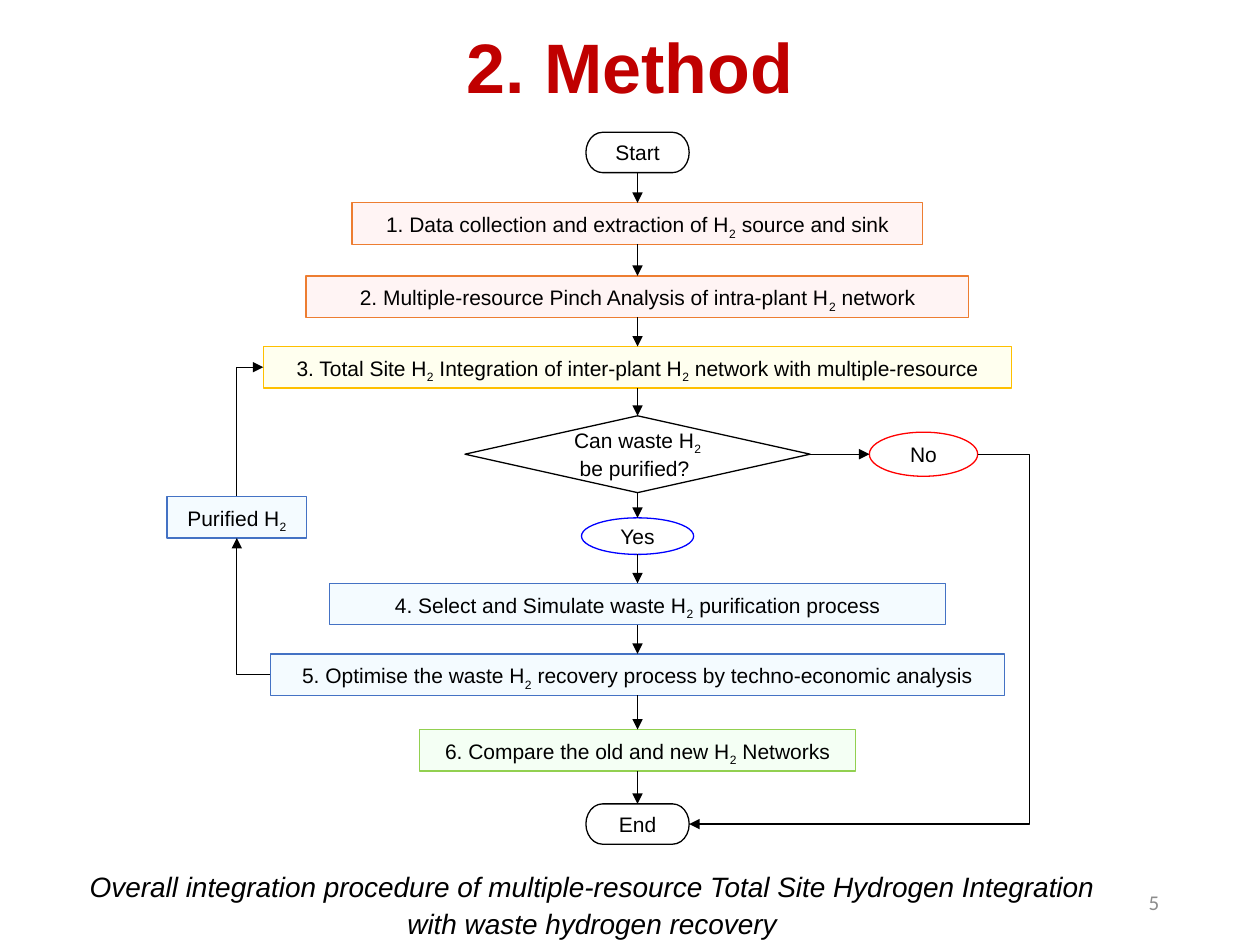
from lxml import etree
from pptx import Presentation
from pptx.dml.color import RGBColor
from pptx.enum.shapes import MSO_CONNECTOR, MSO_SHAPE
from pptx.enum.text import MSO_ANCHOR, MSO_AUTO_SIZE, PP_ALIGN
from pptx.oxml.ns import qn
from pptx.util import Inches, Pt

WIDTH, HEIGHT = 10, 7.5
FLOW_X = 5.06
RECYCLE_X = 1.88
STEP_HEIGHT = 0.33
TOP, LEFT, BOTTOM, RIGHT = range(4)
COLORS = {
    "title": "C00000", "ink": "000000", "number": "8C8C8C", "white": "FFFFFF",
    "orange": "ED7D31", "pink": "FFCCCC", "gold": "FFC000", "cream": "FFFFCC",
    "blue": "4472C4", "sky": "CCECFF", "green": "92D050", "mint": "CCFFCC",
    "yes": "0000FF", "no": "FF0000",
}
# text, top, width, line, fill, opacity in percent
STEPS = [
    ("1. Data collection and extraction of H_2_ source and sink", 1.61, 4.53, "orange", "pink", 20),
    ("2. Multiple-resource Pinch Analysis of intra-plant H_2_ network", 2.19, 5.26, "orange", "pink", 20),
    ("3. Total Site H_2_ Integration of inter-plant H_2_ network with multiple-resource",
     2.75, 5.94, "gold", "cream", 30),
    ("4. Select and Simulate waste H_2_ purification process", 4.63, 4.89, "blue", "sky", 20),
    ("5. Optimise the waste H_2_ recovery process by techno-economic analysis", 5.19, 5.83, "blue", "sky", 20),
    ("6. Compare the old and new H_2_ Networks", 5.79, 3.46, "green", "mint", 20),
]


def color(name):
    return RGBColor.from_string(COLORS[name])


def write(shape, text, size=12, ink="ink", font="Arial", align=PP_ALIGN.CENTER,
          anchor=MSO_ANCHOR.MIDDLE, spacing=None):
    """Fill a shape with one paragraph; parts between underscores are subscripts."""
    frame = shape.text_frame
    frame.word_wrap = True
    frame.vertical_anchor = anchor
    paragraph = frame.paragraphs[0]
    paragraph.alignment = align
    paragraph.line_spacing = spacing
    paragraph.font.size = Pt(size)
    paragraph.font.name = font
    paragraph.font.color.rgb = color(ink)
    for index, part in enumerate(text.split("_")):
        if part:
            run = paragraph.add_run()
            run.text = part
            if index % 2:
                run.font._element.set("baseline", "-25000")
    return paragraph


def add_label(slide, text, left, top, width, height, **style):
    box = slide.shapes.add_textbox(Inches(left * WIDTH), Inches(top * HEIGHT),
                                   Inches(width * WIDTH), Inches(height * HEIGHT))
    return write(box, text, **style)


def add_node(slide, kind, text, center, top, width, height, line="ink", fill=None, **style):
    node = slide.shapes.add_shape(kind, Inches(center - width / 2), Inches(top),
                                  Inches(width), Inches(height))
    node.shadow.inherit = False
    node.line.color.rgb = color(line)
    node.line.width = Pt(0.75)
    if fill:
        node.fill.solid()
        node.fill.fore_color.rgb = color(fill)
    else:
        node.fill.background()
    write(node, text, **style)
    return node


def add_step(slide, text, top, width, line, fill, opacity, center=FLOW_X):
    step = add_node(slide, MSO_SHAPE.RECTANGLE, text, center, top, width, STEP_HEIGHT, line, fill,
                    anchor=MSO_ANCHOR.TOP, spacing=1.1)
    step.text_frame.auto_size = MSO_AUTO_SIZE.SHAPE_TO_FIT_TEXT
    tint = step.fill._xPr.find(qn("a:solidFill"))[0]
    etree.SubElement(tint, qn("a:alpha"), val=str(opacity * 1000))
    return step


def side_point(node, side):
    across, down = [(0.5, 0), (0, 0.5), (0.5, 1), (1, 0.5)][side]
    return int(node.left + node.width * across), int(node.top + node.height * down)


def add_arrow(slide, start, start_side, end, end_side, kind=MSO_CONNECTOR.STRAIGHT, tip="tailEnd"):
    arrow = slide.shapes.add_connector(kind, *side_point(start, start_side), *side_point(end, end_side))
    # ovals have eight connection sites, so only four-sided shapes are joined
    if start.auto_shape_type != MSO_SHAPE.OVAL:
        arrow.begin_connect(start, start_side)
    if end.auto_shape_type != MSO_SHAPE.OVAL:
        arrow.end_connect(end, end_side)
    arrow.line.color.rgb = color("ink")
    arrow.line.width = Pt(0.75)
    etree.SubElement(arrow.line._get_or_add_ln(), qn(f"a:{tip}"), type="triangle")
    etree.SubElement(arrow._element.spPr, qn("a:effectLst"))
    return arrow


def add_corner_arrow(slide, *ends, tip="tailEnd"):
    """One bend: leaves the start horizontally and meets the end vertically."""
    arrow = add_arrow(slide, *ends, kind=MSO_CONNECTOR.ELBOW, tip=tip)
    arrow._element.spPr.find(qn("a:prstGeom")).set("prst", "bentConnector2")


def add_bypass_arrow(slide, *ends, reach):
    """Two bends: runs outside both ends by a share of the connector's width."""
    arrow = add_arrow(slide, *ends, kind=MSO_CONNECTOR.ELBOW)
    geometry = arrow._element.spPr.find(qn("a:prstGeom"))
    guides = geometry.find(qn("a:avLst"))
    if guides is None:
        guides = etree.SubElement(geometry, qn("a:avLst"))
    etree.SubElement(guides, qn("a:gd"), name="adj1", fmla=f"val {round(-reach * 100000)}")


def add_flowchart(slide):
    start, end = [add_node(slide, MSO_SHAPE.FLOWCHART_TERMINATOR, text, FLOW_X, top, 0.82, 0.32)
                  for text, top in [("Start", 1.05), ("End", 6.38)]]
    steps = [add_step(slide, *step) for step in STEPS]
    decision = add_node(slide, MSO_SHAPE.FLOWCHART_DECISION, "Can waste H_2 _be purified? ",
                        FLOW_X, 3.3, 2.74, 0.61)
    yes = add_node(slide, MSO_SHAPE.OVAL, "Yes", FLOW_X, 4.11, 0.89, 0.29, "yes")
    no = add_node(slide, MSO_SHAPE.OVAL, "No", 7.33, 3.43, 0.86, 0.35, "no", "white")
    purified = add_step(slide, "Purified H_2_", 3.94, 1.11, "blue", "sky", 20, center=RECYCLE_X)

    flow = [start, *steps[:3], decision, yes, *steps[3:], end]
    for upper, lower in zip(flow, flow[1:]):
        add_arrow(slide, upper, BOTTOM, lower, TOP)
    add_arrow(slide, decision, RIGHT, no, LEFT)
    add_corner_arrow(slide, steps[4], LEFT, purified, BOTTOM)
    add_corner_arrow(slide, steps[2], LEFT, purified, TOP, tip="headEnd")
    add_bypass_arrow(slide, no, RIGHT, end, RIGHT, reach=0.18)


def main():
    deck = Presentation()
    deck.slide_width, deck.slide_height = Inches(WIDTH), Inches(HEIGHT)
    slide = deck.slides.add_slide(deck.slide_layouts[6])

    title = add_label(slide, "2. Method", 0.07, 0, 0.86, 0.15, size=40, ink="title", spacing=0.9)
    title.font.bold = True
    add_label(slide, "5", 0.71, 0.93, 0.22, 0.05, size=12, ink="number", font="Calibri",
              align=PP_ALIGN.RIGHT)
    caption = add_label(slide, "Overall integration procedure of multiple-resource Total Site "
                        "Hydrogen Integration with waste hydrogen recovery",
                        0.05, 0.91, 0.84, 0.09, size=16, anchor=MSO_ANCHOR.TOP, spacing=1.1)
    caption.font.italic = True
    add_flowchart(slide)
    deck.save("out.pptx")


if __name__ == "__main__":
    main()
